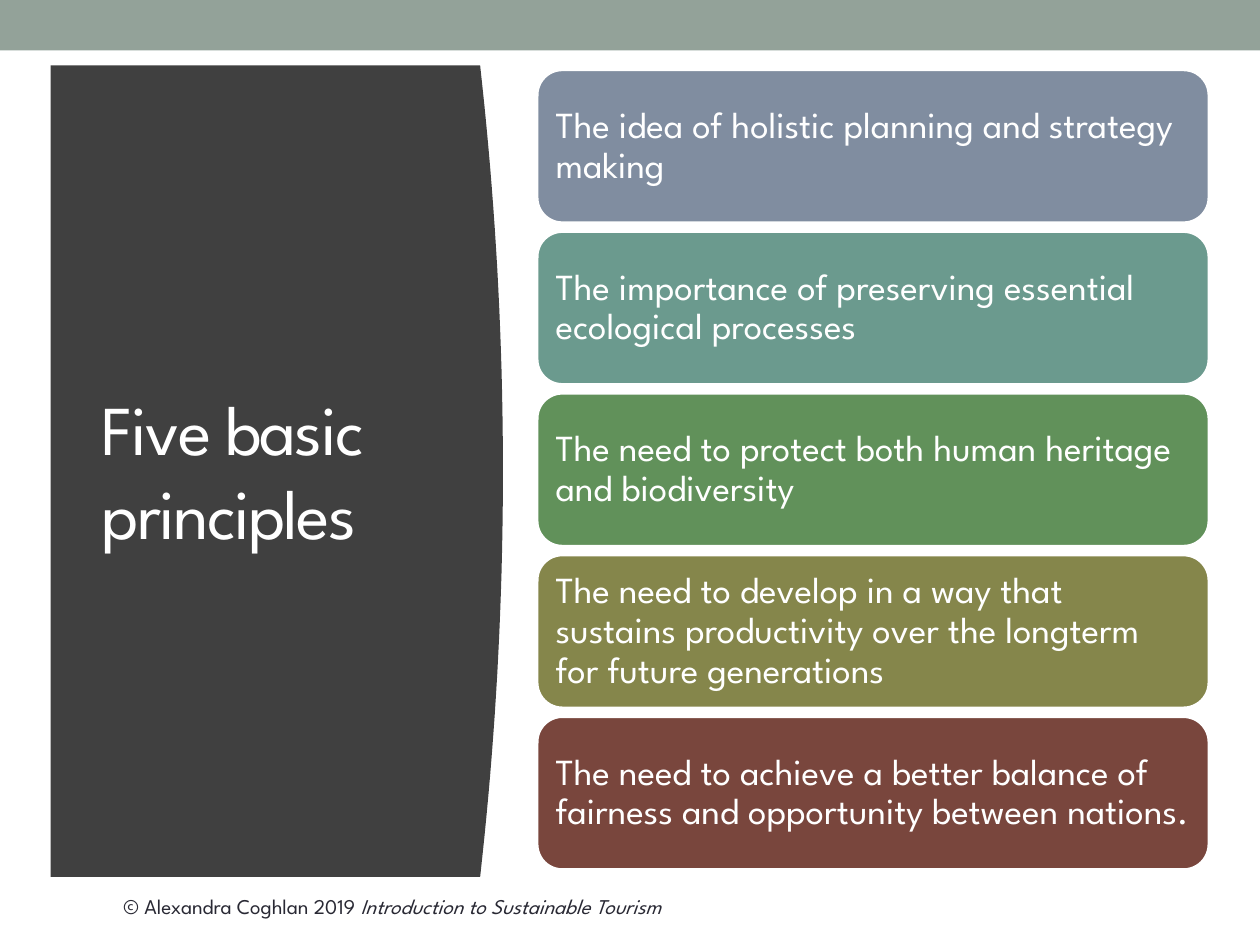
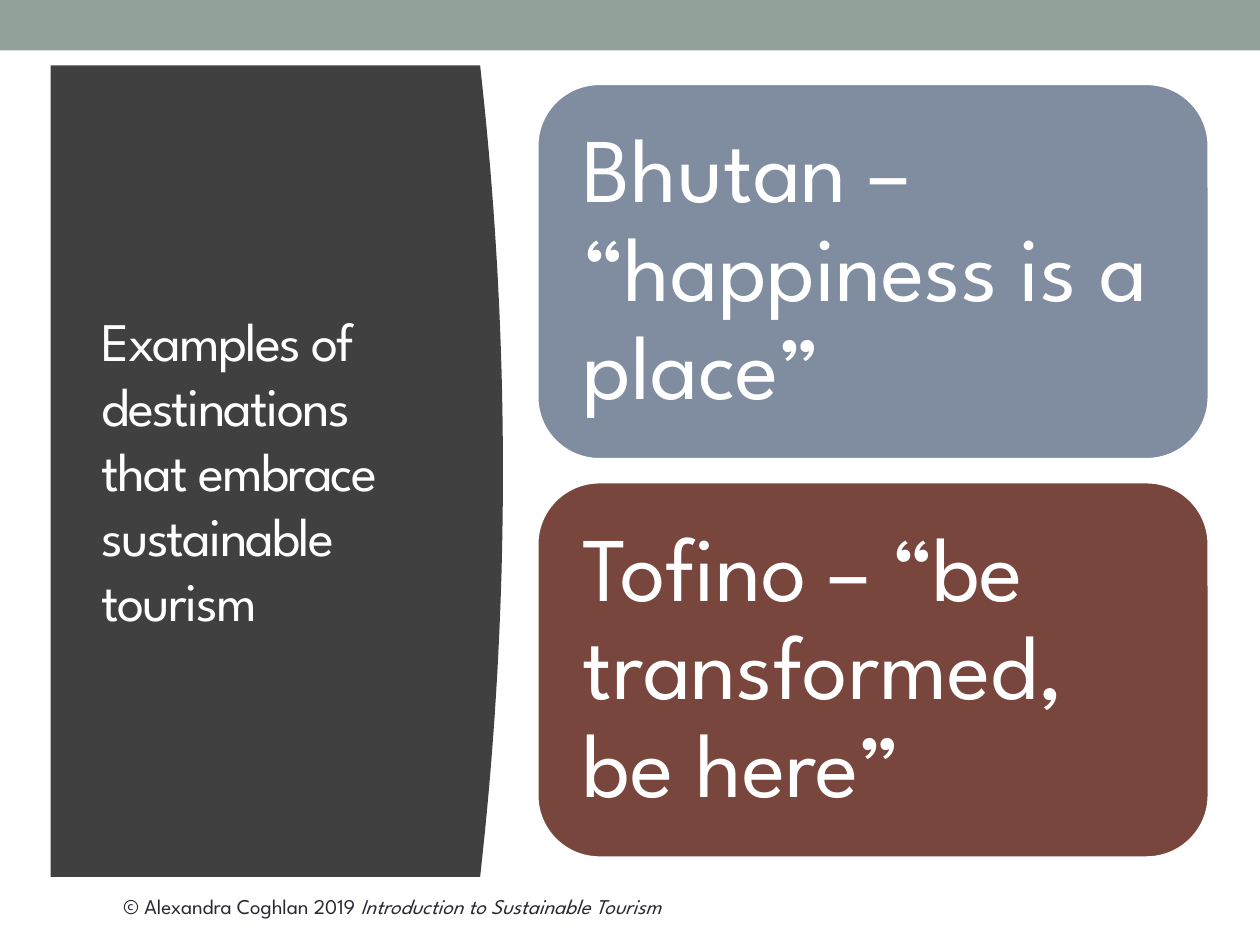
from pptx import Presentation
from pptx.dml.color import RGBColor
from pptx.enum.shapes import MSO_SHAPE as Preset
from pptx.enum.text import MSO_ANCHOR as Anchor, PP_ALIGN as Align
from pptx.util import Cm, Pt

FONT = "League Spartan"
WHITE = "FFFFFF"
INK = "292934"
BAND = "93A299"
PANEL = "404040"
SLATE, TEAL, GREEN, OLIVE, BRICK = "808DA0", "6B9A8E", "61915A", "85864B", "79463D"

PRINCIPLES = [
    ("The idea of holistic planning and strategy making", SLATE),
    ("The importance of preserving essential ecological processes", TEAL),
    ("The need to protect both human heritage and biodiversity", GREEN),
    ("The need to develop in a way that sustains productivity over the "
     "longterm for future generations", OLIVE),
    ("The need to achieve a better balance of fairness and opportunity "
     "between nations.", BRICK),
]
DESTINATIONS = [
    ("Bhutan – “happiness is a place”", SLATE),
    ("Tofino – “be transformed, be here”", BRICK),
]


def rgb(code):
    return RGBColor.from_string(code)


def paint(shape, fill, outline=None):
    shape.shadow.inherit = False
    shape.fill.solid()
    shape.fill.fore_color.rgb = rgb(fill)
    if outline:
        shape.line.color.rgb = rgb(outline)
        shape.line.width = Pt(2.08)
    else:
        shape.line.fill.background()


def format_runs(paragraph, size, color):
    paragraph.alignment = Align.LEFT
    for run in paragraph.runs:
        run.font.name = FONT
        run.font.size = Pt(size)
        run.font.color.rgb = rgb(color)


def add_band(slide):
    band = slide.shapes.add_shape(Preset.RECTANGLE, 0, 0, Cm(25.4), Cm(1.02))
    paint(band, BAND)


def add_footer(slide):
    footer = slide.shapes.add_textbox(Cm(2.24), Cm(17.88), Cm(13.36), Cm(0.76))
    footer.text_frame.word_wrap = True
    credit = footer.text_frame.paragraphs[0]
    credit.text = "© Alexandra Coghlan 2019 "
    book = credit.add_run()
    book.text = "Introduction to Sustainable Tourism"
    book.font.italic = True
    format_runs(credit, 12, INK)


def add_panel(slide):
    left, shoulder, bulge = 1.02, 9.68, 0.46
    top, bottom, steps = 1.32, 17.68, 40
    curve = []
    for step in range(steps + 1):
        t = step / steps
        x = shoulder + bulge * 4 * t * (1 - t)
        curve.append((Cm(x), Cm(top + (bottom - top) * t)))
    outline = slide.shapes.build_freeform(Cm(left), Cm(top))
    outline.add_line_segments(curve + [(Cm(left), Cm(bottom))], close=True)
    paint(outline.convert_to_shape(), PANEL)


def add_title(slide, wording, size):
    title = slide.shapes.add_textbox(Cm(1.8), Cm(2.82), Cm(7.11), Cm(13.31))
    frame = title.text_frame
    frame.word_wrap = True
    frame.vertical_anchor = Anchor.MIDDLE
    frame.text = wording
    heading = frame.paragraphs[0]
    format_runs(heading, size, WHITE)
    heading.runs[0].font._element.set("spc", "-100")


def add_card(slide, wording, fill, top, height, size, inset):
    card = slide.shapes.add_shape(
        Preset.ROUNDED_RECTANGLE, Cm(10.82), Cm(top), Cm(13.56), Cm(height))
    paint(card, fill, WHITE)
    frame = card.text_frame
    frame.word_wrap = True
    frame.vertical_anchor = Anchor.MIDDLE
    frame.margin_left = frame.margin_right = Cm(inset)
    frame.margin_top = frame.margin_bottom = Cm(inset)
    frame.text = wording
    statement = frame.paragraphs[0]
    statement.line_spacing = 0.9
    format_runs(statement, size, WHITE)


def add_cards(slide, cards, top, height, pitch, size, inset):
    for row, (wording, fill) in enumerate(cards):
        add_card(slide, wording, fill, top + row * pitch, height, size, inset)


def add_topic(deck, title, title_size):
    slide = deck.slides.add_slide(deck.slide_layouts[6])
    add_band(slide)
    add_footer(slide)
    add_panel(slide)
    add_title(slide, title, title_size)
    return slide


def main():
    deck = Presentation()
    deck.slide_width, deck.slide_height = Cm(25.4), Cm(19.05)

    principles = add_topic(deck, "Five basic principles", 40)
    add_cards(principles, PRINCIPLES, top=1.4, height=3.1, pitch=3.26,
              size=21, inset=0.23)

    destinations = add_topic(
        deck, "Examples of destinations that embrace sustainable tourism", 31)
    add_cards(destinations, DESTINATIONS, top=1.68, height=7.59, pitch=8.03,
              size=52, inset=0.56)

    deck.save("out.pptx")


if __name__ == "__main__":
    main()
